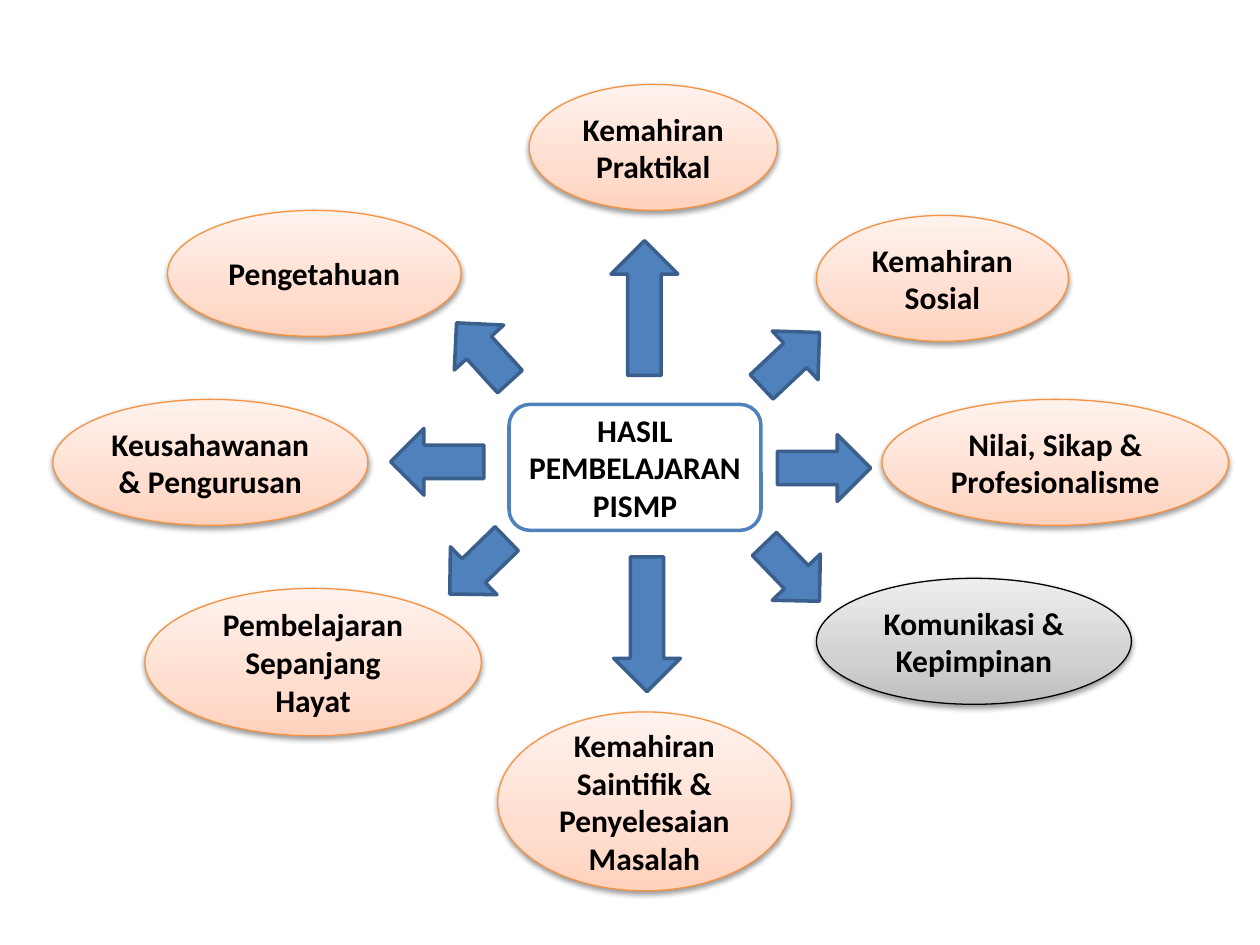
import copy

import lxml.etree
import pptx
import pptx.dml.color
import pptx.enum.shapes
import pptx.enum.text
import pptx.oxml
import pptx.oxml.ns
import pptx.util

Inches = pptx.util.Inches
Shape = pptx.enum.shapes.MSO_SHAPE
qn = pptx.oxml.ns.qn
rgb = pptx.dml.color.RGBColor.from_string

THEME = {
    "peach": {"stops": ("FFD2BD", "FFDED0", "FFF2ED"), "line": "F69240"},
    "grey": {"stops": ("BDBDBD", "D1D1D1", "EEEEEE"), "line": "000000"},
    "hub": {"fill": "FFFFFF", "line": "4F81BD"},
    "arrow": {"fill": "4F81BD", "line": "3A5F8C"},
    "stop positions": (0, 0.35, 1),
    "text": {"name": "Calibri", "size": pptx.util.Pt(18), "bold": True},
    "text colour": "000000",
}
SHADOW = (
    '<a:effectLst xmlns:a="http://schemas.openxmlformats.org/drawingml/2006/main">'
    '<a:outerShdw blurRad="40000" dist="20000" dir="5400000" rotWithShape="0">'
    '<a:srgbClr val="000000"><a:alpha val="38000"/></a:srgbClr>'
    "</a:outerShdw></a:effectLst>"
)

deck = pptx.Presentation()
deck.slide_width, deck.slide_height = Inches(10), Inches(7.5)
page = deck.slides.add_slide(deck.slide_layouts[6])


def add_box(kind, place, style, line_width):
    box = page.shapes.add_shape(kind, *map(Inches, place))
    box.shadow.inherit = False
    box.line.color.rgb = rgb(style["line"])
    box.line.width = pptx.util.Pt(line_width)
    if "fill" in style:
        box.fill.solid()
        box.fill.fore_color.rgb = rgb(style["fill"])
    return box


def write_label(box, text):
    frame = box.text_frame
    frame.word_wrap = True
    frame.vertical_anchor = pptx.enum.text.MSO_ANCHOR.MIDDLE
    para = frame.paragraphs[0]
    para.alignment = pptx.enum.text.PP_ALIGN.CENTER
    span = para.add_run()
    span.text = text
    for name, value in THEME["text"].items():
        setattr(span.font, name, value)
    span.font.color.rgb = rgb(THEME["text colour"])


# Outcomes around the hub: label, place, style
outcomes = [
    ("Pengetahuan", (1.33, 1.67, 2.33, 1), "peach"),
    ("Kemahiran Praktikal", (4.2, 0.67, 1.97, 1), "peach"),
    ("Kemahiran Sosial", (6.48, 1.71, 2, 1), "peach"),
    ("Nilai, Sikap & Profesionalisme", (7, 3.17, 2.75, 1), "peach"),
    ("Komunikasi & Kepimpinan", (6.48, 4.59, 2.5, 1), "grey"),
    ("Kemahiran Saintifik & Penyelesaian Masalah", (3.95, 5.65, 2.33, 1.42), "peach"),
    ("Pembelajaran Sepanjang Hayat", (1.15, 4.67, 2.67, 1.17), "peach"),
    ("Keusahawanan & Pengurusan", (0.42, 3.17, 2.5, 1), "peach"),
]
for label, place, style_name in outcomes:
    style = THEME[style_name]
    oval = add_box(Shape.OVAL, place, style, 0.75)

    # Three-stop gradient, darkest at the bottom
    oval.fill.gradient()
    oval.fill.gradient_angle = 90
    stop_list = oval.element.spPr.find(".//" + qn("a:gsLst"))
    stop_list.append(copy.deepcopy(stop_list[-1]))
    stops = zip(oval.fill.gradient_stops, style["stops"], THEME["stop positions"])
    for stop, colour, position in stops:
        stop.color.rgb = rgb(colour)
        stop.position = position

    # Soft shadow below
    effects = oval.element.spPr.find(qn("a:effectLst"))
    effects.getparent().replace(effects, pptx.oxml.parse_xml(SHADOW))
    write_label(oval, label)

# Hub
hub = add_box(Shape.ROUNDED_RECTANGLE, (4.04, 3.21, 2, 1), THEME["hub"], 2)
write_label(hub, "HASIL PEMBELAJARAN PISMP")

# Arrows from the hub: left, top, length, rotation
arrow_height = 0.53
arrows = [
    (4.58, 2.18, 1.07, 270),
    (3.52, 2.53, 0.63, 227.7),
    (4.6, 4.69, 1.07, 90),
    (3.1, 3.4, 0.74, 180),
    (6.17, 3.45, 0.74, 0),
    (3.48, 4.23, 0.63, 135.8),
    (5.96, 2.59, 0.63, 316.8),
    (5.97, 4.28, 0.63, 46.1),
]
for left, top, length, rotation in arrows:
    place = (left, top, length, arrow_height)
    arrow = add_box(Shape.RIGHT_ARROW, place, THEME["arrow"], 2)
    arrow.rotation = rotation

deck.save("out.pptx")
